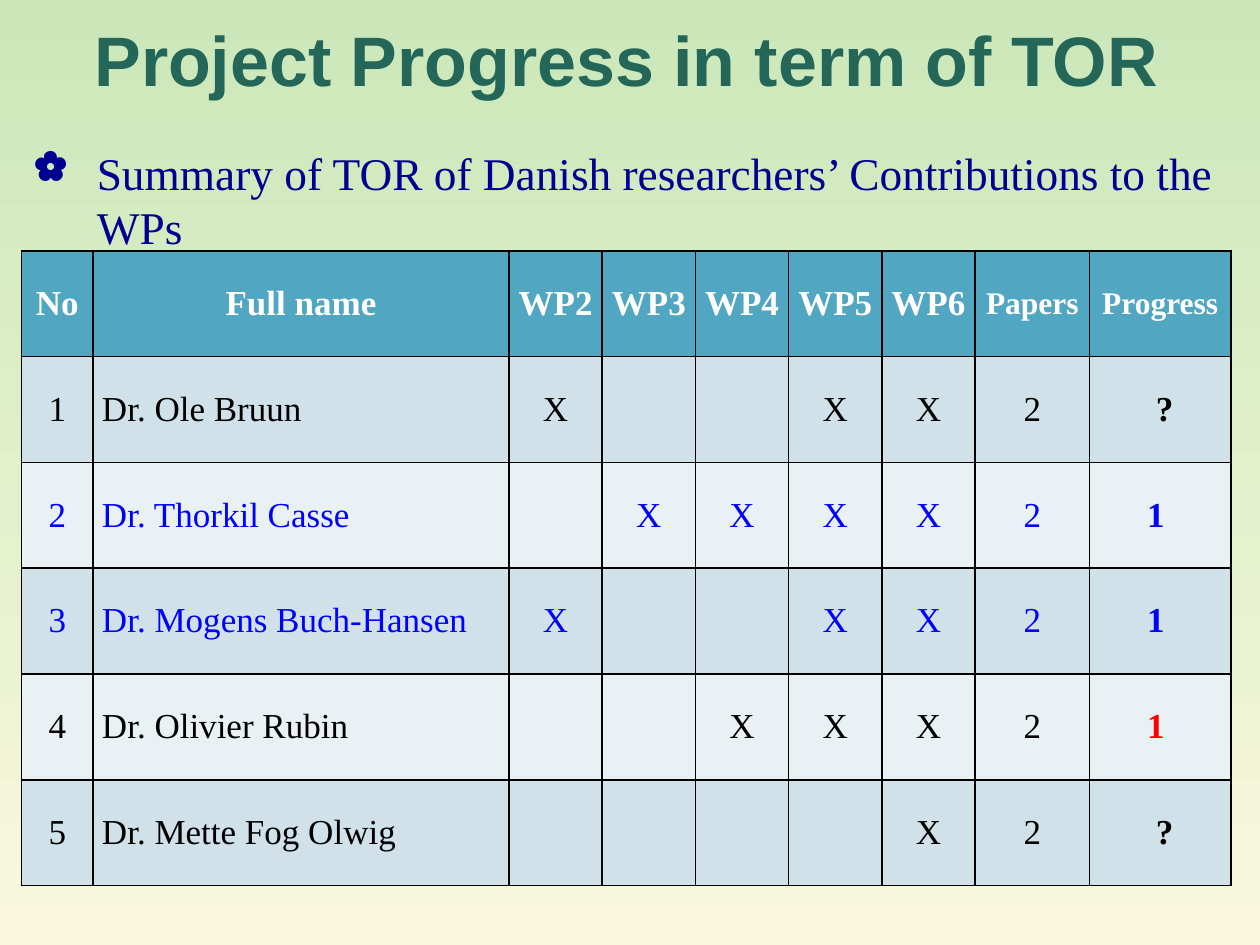
from pptx import Presentation
from pptx.dml.color import RGBColor
from pptx.enum.text import MSO_ANCHOR, PP_ALIGN
from pptx.oxml import parse_xml
from pptx.oxml.ns import nsdecls
from pptx.util import Inches, Pt

BG_TOP = RGBColor(0xCB, 0xE7, 0xB9)
BG_BOTTOM = RGBColor(0xF9, 0xF8, 0xDD)
GREEN = RGBColor(0x24, 0x66, 0x57)
NAVY = RGBColor(0x00, 0x00, 0x90)
HEADER = RGBColor(0x51, 0xA6, 0xC2)
BANDS = RGBColor(0xD0, 0xE1, 0xE9), RGBColor(0xE9, 0xF1, 0xF4)
WHITE = RGBColor(0xFF, 0xFF, 0xFF)
BLACK = RGBColor(0x00, 0x00, 0x00)
BLUE = RGBColor(0x00, 0x00, 0xFF)
RED = RGBColor(0xFF, 0x00, 0x00)

LEFT, WIDTH = 0.17, 9.6
COLS = [0.57, 3.3] + [0.74] * 5 + [0.91, 1.12]
ROW_H = 0.84
HEADINGS = ["No", "Full name", "WP2", "WP3", "WP4", "WP5", "WP6", "Papers", "Progress"]
RESEARCHERS = [
    ("Dr. Ole Bruun", "X  XX", " ?", BLACK, BLACK),
    ("Dr. Thorkil Casse", " XXXX", "1 ", BLUE, BLUE),
    ("Dr. Mogens Buch-Hansen", "X  XX", "1 ", BLUE, BLUE),
    ("Dr. Olivier Rubin", "  XXX", "1 ", BLACK, RED),
    ("Dr. Mette Fog Olwig", "    X", " ?", BLACK, BLACK),
]


def write(tf, text, size=20, color=BLACK, bold=False, font="Times New Roman",
          align=PP_ALIGN.CENTER, spacing=None, bullet=None):
    p = tf.paragraphs[0]
    p.alignment = align
    if spacing:
        p.line_spacing = spacing
    if bullet:
        pPr = p._p.get_or_add_pPr()
        pPr.set("marL", str(Inches(0.5)))
        pPr.set("indent", str(-Inches(0.5)))
        pPr.append(parse_xml(f'<a:buSzPct {nsdecls("a")} val="90000"/>'))
        pPr.append(parse_xml(f'<a:buChar {nsdecls("a")} char="{bullet}"/>'))
    r = p.add_run()
    r.text = text
    r.font.name = font
    r.font.size = Pt(size)
    r.font.bold = bold
    r.font.color.rgb = color


def add_text(s, text, top, height, anchor, **fmt):
    sp = s.shapes.add_textbox(Inches(LEFT), Inches(top), Inches(WIDTH), Inches(height))
    tf = sp.text_frame
    tf.word_wrap = True
    tf.vertical_anchor = anchor
    write(tf, text, **fmt)


def fill_cell(cell, text, fill, **fmt):
    cell.margin_left = cell.margin_right = Inches(0.07)
    cell.margin_top = cell.margin_bottom = 0
    cell.vertical_anchor = MSO_ANCHOR.MIDDLE
    tcPr = cell._tc.get_or_add_tcPr()
    for side in "LRTB":
        tcPr.append(parse_xml(
            f'<a:ln{side} {nsdecls("a")} w="{Pt(1)}"><a:solidFill>'
            f'<a:srgbClr val="{BLACK}"/></a:solidFill></a:ln{side}>'))
    cell.fill.solid()
    cell.fill.fore_color.rgb = fill
    if text.strip(" "):
        write(cell.text_frame, text, **fmt)


def add_progress_table(s):
    n_rows = len(RESEARCHERS) + 1
    frame = s.shapes.add_table(n_rows, len(COLS), Inches(LEFT), Inches(1.99),
                               Inches(WIDTH), Inches(ROW_H * n_rows))
    table = frame.table
    table.horz_banding = False
    for col, width in zip(table.columns, COLS):
        col.width = Inches(width)
    for row in table.rows:
        row.height = Inches(ROW_H)
    for c, heading in enumerate(HEADINGS):
        fill_cell(table.cell(0, c), heading, HEADER, color=WHITE, bold=True,
                  size=18 if c >= 7 else 20)
    for r, (name, marks, progress, color, progress_color) in enumerate(RESEARCHERS, 1):
        values = [str(r), name, *marks, "2", progress]
        for c, value in enumerate(values):
            last = c == len(COLS) - 1
            fill_cell(table.cell(r, c), value, BANDS[(r - 1) % 2],
                      color=progress_color if last else color,
                      bold=last, size=18 if last and not value else 20,
                      align=PP_ALIGN.JUSTIFY if c == 1 else PP_ALIGN.CENTER)


def set_background(s):
    fill = s.background.fill
    fill.gradient()
    fill.gradient_angle = 270
    for stop, color in zip(fill.gradient_stops, (BG_TOP, BG_BOTTOM)):
        stop.color.rgb = color


def main():
    prs = Presentation()
    prs.slide_width, prs.slide_height = Inches(10), Inches(7.5)
    s = prs.slides.add_slide(prs.slide_layouts[6])
    set_background(s)
    add_text(s, "Project Progress in term of TOR", 0.1, 0.79, MSO_ANCHOR.MIDDLE,
             size=40, color=GREEN, bold=True, font="Arial", spacing=0.95)
    add_text(s, "Summary of TOR of Danish researchers’ Contributions to the WPs",
             1.1, 0.81, MSO_ANCHOR.TOP, size=25.9, color=NAVY,
             align=PP_ALIGN.LEFT, bullet="✿")
    add_progress_table(s)
    prs.save("out.pptx")


if __name__ == "__main__":
    main()
